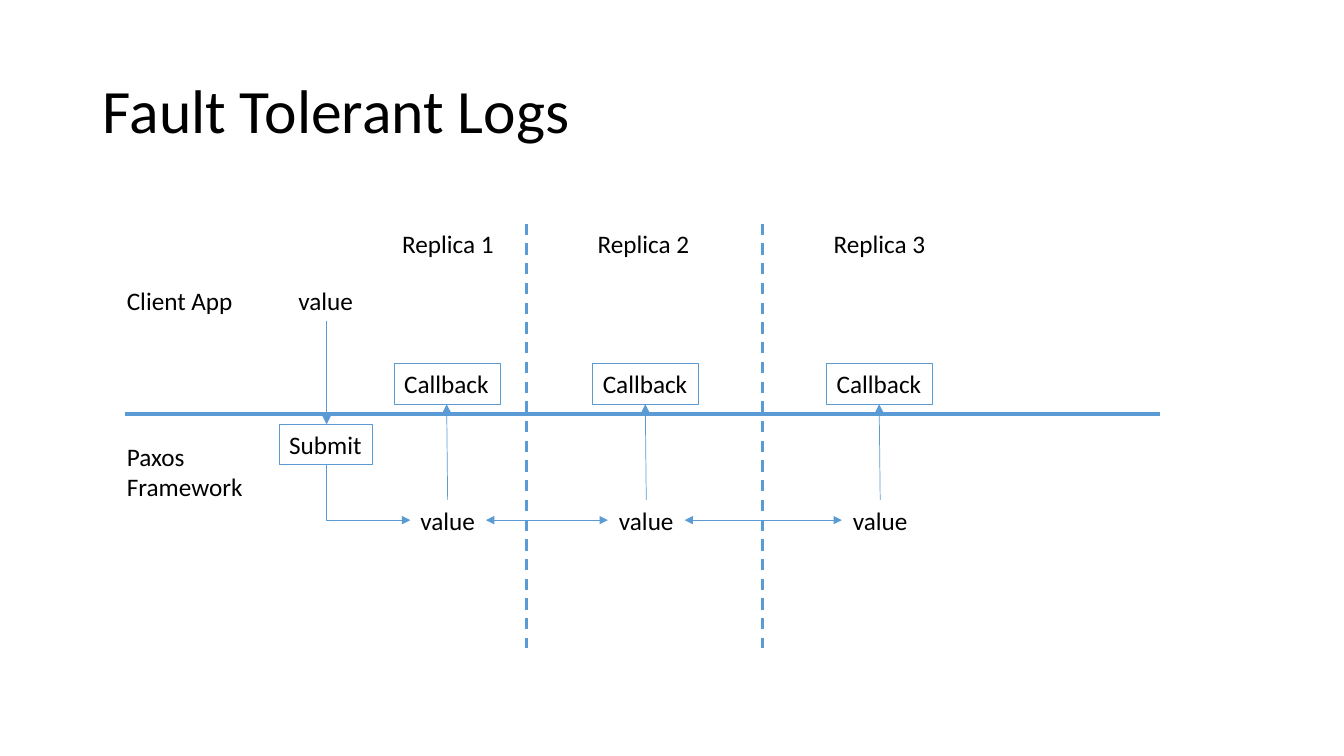
from lxml import etree
from pptx import Presentation
from pptx.dml.color import RGBColor
from pptx.enum.dml import MSO_LINE
from pptx.enum.shapes import MSO_CONNECTOR, MSO_SHAPE
from pptx.enum.text import MSO_ANCHOR, MSO_AUTO_SIZE, PP_ALIGN
from pptx.oxml.ns import qn
from pptx.util import Inches, Pt

STRAIGHT = MSO_CONNECTOR.STRAIGHT
RECT = MSO_SHAPE.RECTANGLE
DASH = MSO_LINE.DASH
LEFT = PP_ALIGN.LEFT
MIDDLE = MSO_ANCHOR.MIDDLE
TOP = MSO_ANCHOR.TOP
BLUE = RGBColor.from_string("5B9BD5")
BLACK = RGBColor.from_string("000000")


def label(text, x, y, w, h=0.4, boxed=False):
    area = tuple(Inches(n) for n in (x, y, w, h))
    if boxed:
        box = slide.shapes.add_shape(RECT, *area)
        box.shadow.inherit = False
        box.fill.background()
        box.line.color.rgb = BLUE
        box.line.width = Pt(0.75)
    else:
        box = slide.shapes.add_textbox(*area)
    frame = box.text_frame
    frame.text = text
    frame.word_wrap = False
    frame.auto_size = MSO_AUTO_SIZE.SHAPE_TO_FIT_TEXT
    frame.vertical_anchor = TOP
    for para in frame.paragraphs:
        para.alignment = LEFT
        font = para.runs[0].font
        font.name, font.size, font.color.rgb = "Calibri", Pt(18), BLACK


def link(x1, y1, x2, y2, width=0.5, ends=()):
    """Draw a line with arrowheads at the named ends, headEnd before tailEnd."""
    line = slide.shapes.add_connector(
        STRAIGHT, Inches(x1), Inches(y1), Inches(x2), Inches(y2))
    line.line.color.rgb = BLUE
    line.line.width = Pt(width)
    for end in ends:
        etree.SubElement(line.line._get_or_add_ln(), qn("a:" + end), type="triangle")
    etree.SubElement(line._element.spPr, qn("a:effectLst"))
    return line


deck = Presentation()
deck.slide_width, deck.slide_height = Inches(13.33), Inches(7.5)
slide = deck.slides.add_slide(deck.slide_layouts[5])

title = slide.shapes.title
title.left, title.top = Inches(0.92), Inches(0.4)
title.width, title.height = Inches(11.5), Inches(1.45)
title.text_frame.text = "Fault Tolerant Logs"
title.text_frame.vertical_anchor = MIDDLE
head = title.text_frame.paragraphs[0]
head.alignment, head.line_spacing = LEFT, 0.9
font = head.runs[0].font
font.name, font.size, font.color.rgb = "Calibri", Pt(44), BLACK

# Borders between replicas, and between client and framework
for x in (5.22, 7.56):
    link(x, 2.22, x, 6.43, 2).line.dash_style = DASH
link(1.24, 4.11, 11.51, 4.11, 3)

label("Client App", 1.16, 2.78, 1.26)
label("Paxos\nFramework", 1.16, 4.33, 1.36, 0.71)

# Each replica: name, callback box, value and the arrow between them
mids = (4.44, 6.41, 8.73)
for num, mid in enumerate(mids, 1):
    label(f"Replica {num}", (3.89, 5.83, 8.17)[num - 1], 2.22, 1.12)
    label("Callback", mid - 0.53, 3.61, 1.05, boxed=True)
    label("value", mid - 0.37, 4.96, 0.75)
    link(mid, 4.96, mid - 0.01, 4.01, ends=["tailEnd"])
for start, stop in zip(mids, mids[1:]):
    link(start + 0.38, 5.16, stop - 0.38, 5.16, ends=["headEnd", "tailEnd"])

# Path of the submitted value
label("value", 2.86, 2.78, 0.75)
label("Submit", 2.77, 4.21, 0.93, boxed=True)
link(3.24, 3.18, 3.24, 4.21, ends=["tailEnd"])
bend = link(3.38, 4.47, 3.93, 5.3, ends=["tailEnd"])
props = bend._element.spPr
props.find(qn("a:prstGeom")).set("prst", "bentConnector2")
props.find(qn("a:xfrm")).set("rot", "16200000")
props.find(qn("a:xfrm")).set("flipH", "1")

deck.save("out.pptx")
